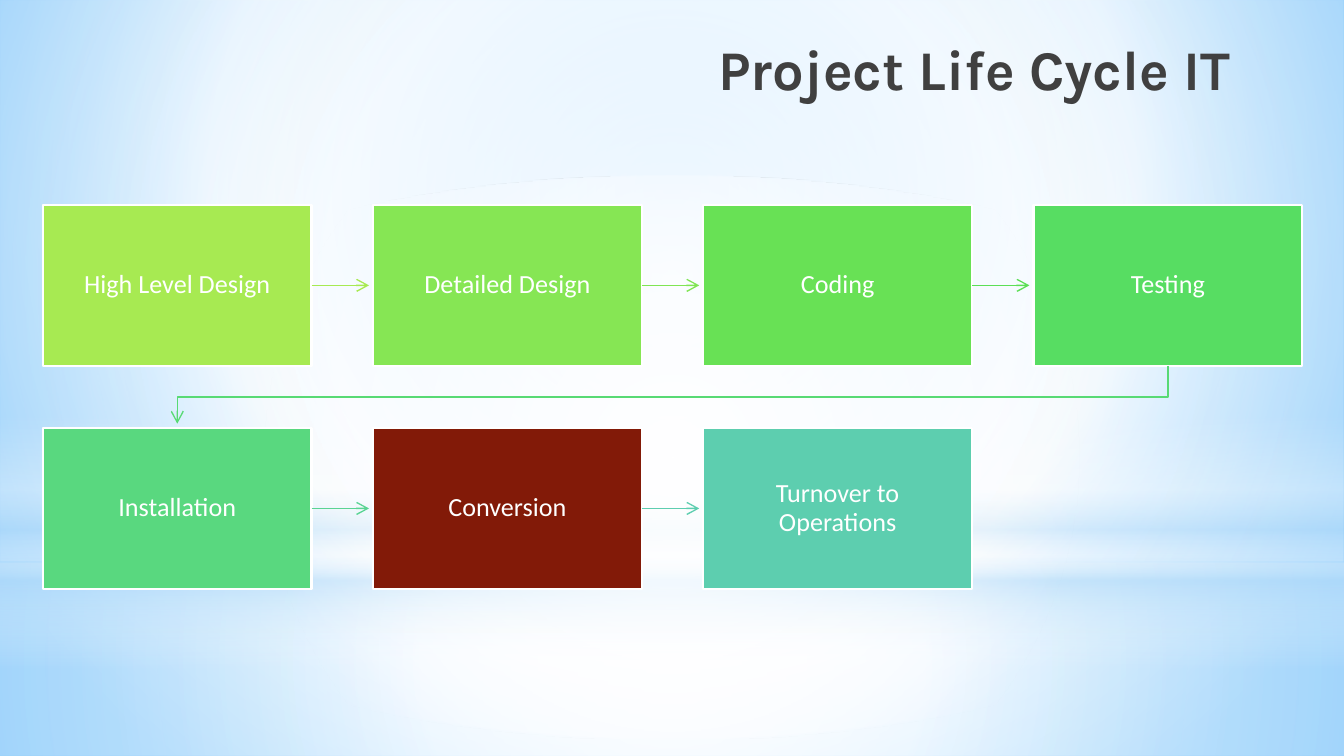
from lxml import etree
from pptx import Presentation
from pptx.dml.color import RGBColor
from pptx.enum.shapes import MSO_CONNECTOR, MSO_SHAPE
from pptx.enum.text import MSO_ANCHOR, MSO_AUTO_SIZE, PP_ALIGN
from pptx.oxml.ns import qn
from pptx.util import Pt

RECT, OVAL = MSO_SHAPE.RECTANGLE, MSO_SHAPE.OVAL
STRAIGHT = MSO_CONNECTOR.STRAIGHT
MIDDLE, BOTTOM = MSO_ANCHOR.MIDDLE, MSO_ANCHOR.BOTTOM
CENTER, RIGHT = PP_ALIGN.CENTER, PP_ALIGN.RIGHT
NO_AUTOFIT = MSO_AUTO_SIZE.NONE

COLORS = {
    "white": "FFFFFF", "title": "404040", "haze": "B4DCFA",
    "sky": "9ED5FF", "deep_sky": "5BB9FF",
}
SLIDE_W, SLIDE_H = 720, 405
COLS = 4
BOX_W, BOX_H = 144, 86.4
LEFT, TOP = 23, 109.7
PITCH_X, PITCH_Y = 176.9, 119.5
ARROW_GAP = 2.2

STEPS = [
    ("High Level Design", "A7EA52", "A7EA52"),
    ("Detailed Design", "86E654", "80E554"),
    ("Coding", "68E155", "5CDF56"),
    ("Testing", "57DD62", "58DA74"),
    ("Installation", "59D87F", "5AD493"),
    ("Conversion", "821A08", "5DCEAF"),
    ("Turnover to Operations", "5DCEAF", None),
]
CENTERED = (50, 50, 50, 50)
BACKDROP = [
    (RECT, 301.5, 103.5, [(0, "white", 91), (37, "white", 76), (100, "haze", 79)], CENTERED),
    (RECT, 0, 301.5, [(0, "white", 89), (48, "white", 62), (100, "haze", 79)], CENTERED),
    (RECT, 222.5, 135.4, [(0, "white", 0), (29, "white", 30), (45, "haze", 40),
                          (55, "white", 26), (65, "haze", 60), (100, "white", 0)], None),
    (OVAL, 94.3, 301.7, [(0, "white", 100), (56, "white", 0)], CENTERED),
]


def rgb(value):
    return RGBColor.from_string(value)


def set_gradient(fill, element, stops, focus):
    fill.gradient()
    grad = element.find(".//" + qn("a:gradFill"))
    for child in list(grad):
        grad.remove(child)
    gs_list = etree.SubElement(grad, qn("a:gsLst"))
    for pos, color, alpha in stops:
        gs = etree.SubElement(gs_list, qn("a:gs"), pos=str(pos * 1000))
        clr = etree.SubElement(gs, qn("a:srgbClr"), val=COLORS[color])
        etree.SubElement(clr, qn("a:alpha"), val=str(alpha * 1000))
    if focus:
        path = etree.SubElement(grad, qn("a:path"), path="circle")
        sides = {side: str(v * 1000) for side, v in zip("ltrb", focus)}
        etree.SubElement(path, qn("a:fillToRect"), sides)
    else:
        etree.SubElement(grad, qn("a:lin"), ang="5400000", scaled="0")


def add_backdrop(s):
    stops = [(0, "sky", 100), (60, "white", 100), (100, "deep_sky", 100)]
    set_gradient(s.background.fill, s.element, stops, (20, 10, 20, 60))
    for kind, top, height, stops, focus in BACKDROP:
        sp = s.shapes.add_shape(kind, 0, Pt(top), Pt(SLIDE_W), Pt(height))
        sp.shadow.inherit = False
        sp.line.fill.background()
        set_gradient(sp.fill, sp.element, stops, focus)


def set_text(sp, text, frame, para, font, color):
    tf = sp.text_frame
    p = tf.paragraphs[0]
    r = p.add_run()
    r.text = text
    for target, values in ((tf, frame), (p, para), (r.font, font)):
        for name, value in values.items():
            setattr(target, name, value)
    for side in ("left", "top", "right", "bottom"):
        setattr(tf, f"margin_{side}", Pt(7.5))
    r.font.color.rgb = rgb(color)


def add_title(s, text):
    sp = s.shapes.title
    s.shapes.element.append(sp.element)
    sp.left, sp.top, sp.width, sp.height = Pt(29.5), Pt(16.6), Pt(637.2), Pt(45.4)
    set_text(sp, text,
             {"vertical_anchor": BOTTOM, "word_wrap": True, "auto_size": NO_AUTOFIT},
             {"alignment": RIGHT},
             {"name": "Karla", "size": Pt(30), "bold": True}, COLORS["title"])


def add_step(s, index, text, color):
    row, col = divmod(index, COLS)
    sp = s.shapes.add_shape(RECT, Pt(LEFT + col * PITCH_X), Pt(TOP + row * PITCH_Y),
                            Pt(BOX_W), Pt(BOX_H))
    sp.shadow.inherit = False
    sp.fill.solid()
    sp.fill.fore_color.rgb = rgb(color)
    sp.line.color.rgb = rgb(COLORS["white"])
    sp.line.width = Pt(1.25)
    set_text(sp, text,
             {"vertical_anchor": MIDDLE, "word_wrap": True},
             {"alignment": CENTER, "line_spacing": 0.9},
             {"name": "Calibri", "size": Pt(14)}, COLORS["white"])
    return sp


def style_arrow(sp, color):
    sp.line.color.rgb = rgb(color)
    sp.line.width = Pt(0.75)
    ln = sp.element.spPr.find(qn("a:ln"))
    etree.SubElement(ln, qn("a:tailEnd"), type="arrow")


def add_arrow(s, start, end, color):
    y = start.top + start.height // 2
    cxn = s.shapes.add_connector(STRAIGHT, start.left + start.width, y,
                                 end.left - Pt(ARROW_GAP), y)
    cxn.begin_connect(start, 3)
    style_arrow(cxn, color)
    etree.SubElement(cxn.element.spPr, qn("a:effectLst"))


def add_row_turn(s, start, end, color):
    x1, x2 = (sp.left + sp.width // 2 for sp in (start, end))
    y1 = start.top + start.height
    y2 = end.top - Pt(ARROW_GAP)
    middle = (y1 + end.top) // 2
    builder = s.shapes.build_freeform(x1, y1)
    builder.add_line_segments([(x1, middle), (x2, middle), (x2, y2)], close=False)
    sp = builder.convert_to_shape()
    sp.shadow.inherit = False
    sp.fill.background()
    style_arrow(sp, color)


def main():
    prs = Presentation()
    prs.slide_width, prs.slide_height = Pt(SLIDE_W), Pt(SLIDE_H)
    s = prs.slides.add_slide(prs.slide_layouts[5])
    add_backdrop(s)
    add_title(s, "Project Life Cycle IT")
    boxes = [add_step(s, i, text, fill) for i, (text, fill, _) in enumerate(STEPS)]
    for start, end, (_, _, color) in zip(boxes, boxes[1:], STEPS):
        link = add_arrow if start.top == end.top else add_row_turn
        link(s, start, end, color)
    prs.save("out.pptx")


if __name__ == "__main__":
    main()
